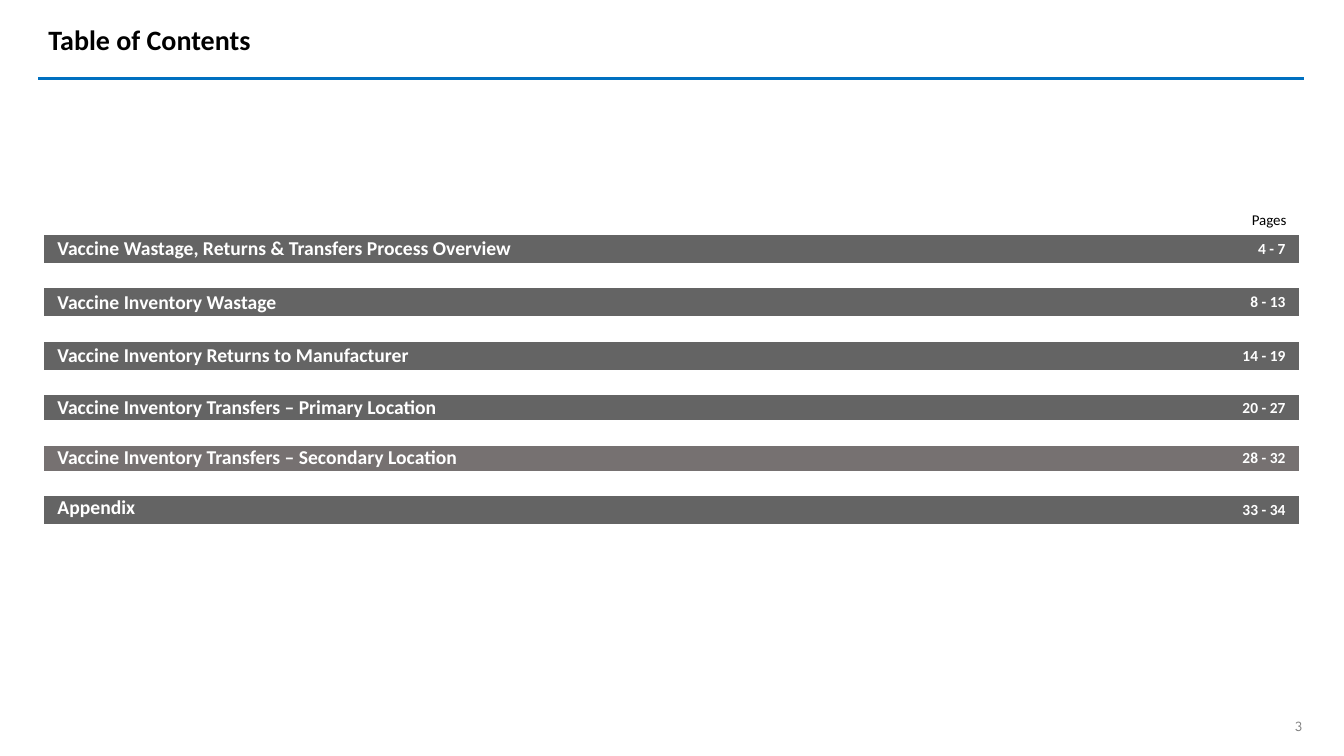
from lxml import etree
from pptx import Presentation
from pptx.dml.color import RGBColor
from pptx.enum.shapes import MSO_CONNECTOR
from pptx.enum.text import MSO_ANCHOR, PP_ALIGN
from pptx.oxml.ns import qn
from pptx.util import Inches, Pt

STRAIGHT = MSO_CONNECTOR.STRAIGHT
MIDDLE, TOP = MSO_ANCHOR.MIDDLE, MSO_ANCHOR.TOP
LEFT, CENTER, RIGHT = PP_ALIGN.LEFT, PP_ALIGN.CENTER, PP_ALIGN.RIGHT
PLAIN_TABLE = "{2D5ABB26-0587-4C30-8999-92F81FD0307C}"
COLORS = {
    "black": "000000",
    "white": "FFFFFF",
    "rule": "0070C0",
    "bar": "646464",
    "warm_bar": "767171",
    "number": "808080",
}
SECTIONS = [
    ("Vaccine Wastage, Returns & Transfers Process Overview", "4 - 7", "bar", MIDDLE, 0.28),
    ("Vaccine Inventory Wastage", "8 - 13", "bar", MIDDLE, 0.28),
    ("Vaccine Inventory Returns to Manufacturer", "14 - 19", "bar", MIDDLE, 0.28),
    ("Vaccine Inventory Transfers – Primary Location", "20 - 27", "bar", MIDDLE, 0.25),
    ("Vaccine Inventory Transfers – Secondary Location", "28 - 32", "warm_bar", MIDDLE, 0.25),
    ("Appendix", "33 - 34", "bar", TOP, 0.28),
]
GAP_HEIGHT = 0.25


def write(text_frame, text, size, color, bold=False, align=LEFT, font="Calibri"):
    text_frame.text = text
    paragraph = text_frame.paragraphs[0]
    paragraph.alignment = align
    run_font = paragraph.runs[0].font
    run_font.name = font
    run_font.size = Pt(size)
    run_font.bold = bold
    run_font.color.rgb = RGBColor.from_string(COLORS[color])


def add_label(slide, left, top, width, height, text, size, color, align, font):
    text_frame = slide.shapes.add_textbox(
        Inches(left), Inches(top), Inches(width), Inches(height)
    ).text_frame
    text_frame.margin_left = text_frame.margin_right = 0
    text_frame.margin_top = text_frame.margin_bottom = 0
    text_frame.vertical_anchor = MIDDLE
    text_frame.word_wrap = True
    write(text_frame, text, size, color, align=align, font=font)


presentation = Presentation()
presentation.slide_width = Inches(13.33)
presentation.slide_height = Inches(7.5)
slide = presentation.slides.add_slide(presentation.slide_layouts[5])

title = slide.shapes.title
title.left, title.top = Inches(0.38), Inches(-0.01)
title.width, title.height = Inches(12.55), Inches(0.79)
title.text_frame.vertical_anchor = MIDDLE
write(title.text_frame, "Table of Contents", 20, "black", bold=True)

rule = slide.shapes.add_connector(
    STRAIGHT, Inches(0.38), Inches(0.78), Inches(12.93), Inches(0.78)
)
rule.line.color.rgb = RGBColor.from_string(COLORS["rule"])
rule.line.width = Pt(2.25)
etree.SubElement(rule._element.spPr, qn("a:effectLst"))

contents = slide.shapes.add_table(
    len(SECTIONS) * 2, 2, Inches(0.44), Inches(2.33), Inches(12.44), Inches(3.13)
).table
contents.first_row = False
contents.horz_banding = False
contents._tbl.tblPr.find(qn("a:tableStyleId")).text = PLAIN_TABLE
contents.columns[0].width = Inches(10.11)
contents.columns[1].width = Inches(2.33)

for index, (name, pages, fill, anchor, height) in enumerate(SECTIONS):
    bar_row, gap_row = index * 2, index * 2 + 1
    contents.rows[bar_row].height = Inches(height)
    contents.rows[gap_row].height = Inches(GAP_HEIGHT)
    entries = [(name, 14, LEFT, anchor), (pages, 11, RIGHT, MIDDLE)]
    for column, (text, size, align, cell_anchor) in enumerate(entries):
        bar, gap = contents.cell(bar_row, column), contents.cell(gap_row, column)
        for cell in (bar, gap):
            cell.margin_left = cell.margin_right = Inches(0.13)
            cell.margin_top = cell.margin_bottom = 0
        bar.vertical_anchor = cell_anchor
        bar.fill.solid()
        bar.fill.fore_color.rgb = RGBColor.from_string(COLORS[fill])
        write(bar.text_frame, text, size, "white", bold=True, align=align)
        gap.fill.background()
        gap_paragraph = gap.text_frame.paragraphs[0]
        etree.SubElement(gap_paragraph._p, qn("a:endParaRPr"), sz="1000")

add_label(slide, 12.28, 2.02, 0.48, 0.31, "Pages", 10.7, "black", RIGHT, "Calibri")
add_label(slide, 12.64, 7.12, 0.48, 0.17, "3", 10, "number", CENTER, "League Spartan")

presentation.save("out.pptx")
